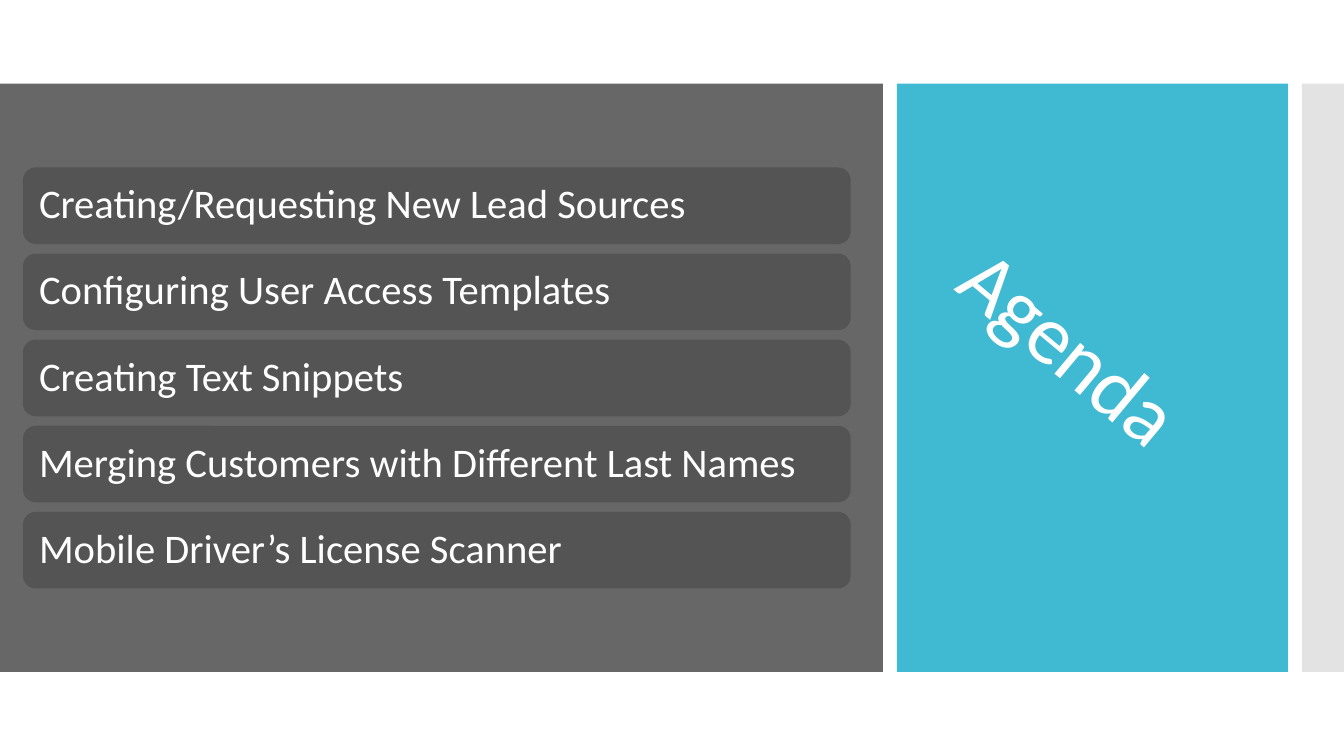
from pptx import Presentation
from pptx.dml.color import RGBColor
from pptx.enum.shapes import MSO_SHAPE
from pptx.enum.text import MSO_ANCHOR, MSO_AUTO_SIZE, PP_ALIGN
from pptx.util import Cm, Pt

# Content
TITLE = "Agenda"
TOPICS = [
    "Creating/Requesting New Lead Sources",
    "Configuring User Access Templates",
    "Creating Text Snippets",
    "Merging Customers with Different Last Names",
    "Mobile Driver’s License Scanner",
]

# Colours
WHITE = RGBColor(0xFF, 0xFF, 0xFF)
GREY = RGBColor(0x67, 0x67, 0x67)
DARK_GREY = RGBColor(0x54, 0x54, 0x54)
PALE_GREY = RGBColor(0xE3, 0xE3, 0xE3)
TEAL = RGBColor(0x40, 0xBA, 0xD2)

# Layout, in centimetres
BAND_TOP, BAND_HEIGHT = 2.11, 14.82
PANELS = [(0, 22.25, GREY), (22.6, 9.86, TEAL), (32.81, 1.06, PALE_GREY)]
BAR_LEFT, BAR_TOP, BAR_WIDTH, BAR_HEIGHT = 0.58, 4.22, 20.86, 1.93
BAR_PITCH = 2.17


def add_box(page, kind, left, top, width, height, color):
    box = page.shapes.add_shape(kind, Cm(left), Cm(top), Cm(width), Cm(height))
    box.shadow.inherit = False
    box.fill.solid()
    box.fill.fore_color.rgb = color
    box.line.fill.background()
    return box


def write(box, text, size, inset=0.25, space_after=0, tracking=0):
    frame = box.text_frame
    frame.word_wrap = True
    frame.auto_size = MSO_AUTO_SIZE.NONE
    frame.vertical_anchor = MSO_ANCHOR.MIDDLE
    frame.margin_left = frame.margin_right = Cm(inset)
    para = frame.paragraphs[0]
    para.alignment = PP_ALIGN.LEFT
    para.line_spacing = 0.9
    para.space_after = Pt(space_after)
    span = para.add_run()
    span.text = text
    span.font.name = "Calibri"
    span.font.size = Pt(size)
    span.font.color.rgb = WHITE
    if tracking:
        span.font._element.set("spc", str(round(tracking * 100)))


def main():
    deck = Presentation()
    deck.slide_width, deck.slide_height = Cm(33.87), Cm(19.05)
    page = deck.slides.add_slide(deck.slide_layouts.get_by_name("Title Only"))

    # Three panels across the page; the title stays in front of them
    title = page.shapes.title
    for left, width, color in PANELS:
        panel = add_box(page, MSO_SHAPE.RECTANGLE, left, BAND_TOP,
                        width, BAND_HEIGHT, color)
        title._element.addprevious(panel._element)

    # Slanted title
    title.left, title.top = Cm(23.32), Cm(8.05)
    title.width, title.height = Cm(8.18), Cm(2.34)
    title.rotation = 39.8
    write(title, TITLE, 60, tracking=-0.6)

    # One bar per topic
    for index, topic in enumerate(TOPICS):
        bar = add_box(page, MSO_SHAPE.ROUNDED_RECTANGLE, BAR_LEFT,
                      BAR_TOP + index * BAR_PITCH, BAR_WIDTH, BAR_HEIGHT,
                      DARK_GREY)
        write(bar, topic, 29, inset=0.31)

    deck.save("out.pptx")


if __name__ == "__main__":
    main()
